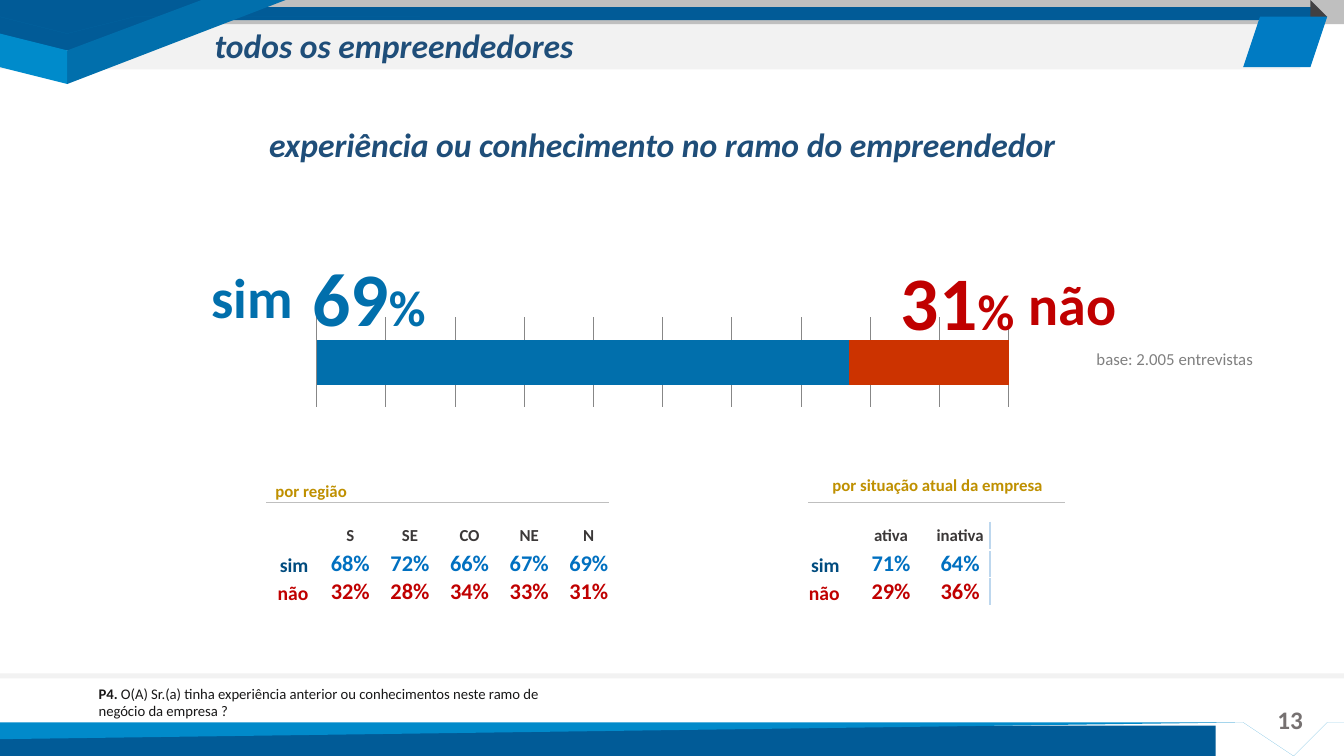
"""Build the slide on entrepreneurs' earlier experience in their line of business."""
from lxml import etree
from pptx import Presentation
from pptx.chart.data import CategoryChartData
from pptx.dml.color import RGBColor
from pptx.enum.chart import XL_CHART_TYPE
from pptx.enum.shapes import MSO_CONNECTOR, MSO_SHAPE
from pptx.enum.text import MSO_ANCHOR, MSO_AUTO_SIZE, PP_ALIGN
from pptx.oxml import parse_xml
from pptx.oxml.ns import nsdecls, qn
from pptx.util import Inches, Pt

LEFT, CENTER, RIGHT = PP_ALIGN.LEFT, PP_ALIGN.CENTER, PP_ALIGN.RIGHT
TOP, MIDDLE, BOTTOM = MSO_ANCHOR.TOP, MSO_ANCHOR.MIDDLE, MSO_ANCHOR.BOTTOM
RECTANGLE, STRAIGHT = MSO_SHAPE.RECTANGLE, MSO_CONNECTOR.STRAIGHT
STACKED_BAR, NO_AUTOFIT = XL_CHART_TYPE.BAR_STACKED_100, MSO_AUTO_SIZE.NONE
FONT = "Calibri"
CELL = Inches(1 / 6)
COLUMNS, ROWS = 80, 45
COLORS = {
    "pale": "F2F2F2", "silver": "BFBFBF", "navy": "015B97", "blue": "016FAC",
    "sky": "008BCB", "chevron": "018ACA", "fold": "414042", "badge": "007BC3",
    "title": "1F4E79", "red": "C00000", "orange": "CC3300", "gold": "BF9000",
    "grey": "808080", "page": "767171", "ink": "181717", "header": "3B3838",
    "yes label": "004B7E", "yes value": "0070C0", "rule": "BDD7EE", "white": "FFFFFF",
}
RGB = {name: RGBColor.from_string(value) for name, value in COLORS.items()}


def grid(*cells):
    """Turn grid cells into slide lengths."""
    return [round(cell * CELL) for cell in cells]


def style(paragraph, size, color, bold=True, italic=False, align=LEFT):
    """Format a whole paragraph."""
    paragraph.alignment = align
    font = paragraph.font
    font.name, font.size, font.bold, font.italic = FONT, Pt(size), bold, italic
    font.color.rgb = RGB[color]


presentation = Presentation()
presentation.slide_width, presentation.slide_height = grid(COLUMNS, ROWS)
slide = presentation.slides.add_slide(presentation.slide_layouts[5])
shapes = slide.shapes

bands = [
    (0, 0.9, 77.4, 3.24, "pale"),
    (0, 0, COLUMNS, 1.44, "silver"),
    (6.78, 0.42, 71.4, 0.78, "navy"),
    (0, 40.08, COLUMNS, 0.3, "pale"),
    (0, 43.2, 72.36, 1.8, "navy"),
]
outlines = [
    ("navy", [(0.06, 0), (15.27, 0), (7.74, 3.3), (0, 3.3)]),
    ("blue", [(16.75, 0), (11.92, 0), (3.9, 2.94), (3.9, 4.98)]),
    ("sky", [(3.9, 3), (0.06, 1.62), (0.06, 3.6), (3.9, 4.98)]),
    ("chevron", [(0, 43.32), (74.04, 43.2), (76.62, 44.58), (79.26, 43.2), (80, 43.2),
                 (80, 43.44), (79.26, 43.44), (76.62, 44.88), (73.98, 43.44), (0, 43.5)]),
    ("blue", [(0.06, 0.9), (0.36, 0.9), (4.2, 2.28), (8.04, 0.9), (24.6, 0.9),
              (24.6, 1.08), (8.04, 1.08), (4.2, 2.46), (0.36, 1.08), (0.06, 1.08)]),
    ("fold", [(78.18, 1.2), (78.18, 0.42), (79.08, 1.2)]),
    ("badge", [(75.18, 1.2), (79.08, 1.2), (78.42, 4.08), (78.3, 4.38), (78.12, 4.5),
               (74.46, 4.5), (74.28, 4.4), (74.26, 4.2), (74.88, 1.44), (75, 1.25)]),
]
decorations = []
for *box, color in bands:
    decorations.append((shapes.add_shape(RECTANGLE, *grid(*box)), color))
for color, points in outlines:
    builder = shapes.build_freeform(*points[0], scale=CELL)
    builder.add_line_segments(points[1:], close=True)
    decorations.append((builder.convert_to_shape(), color))
for shape, color in decorations:
    shape.shadow.inherit = False
    shape.fill.solid()
    shape.fill.fore_color.rgb = RGB[color]
    shape.line.fill.background()

title = shapes.title
shapes.element.append(title.element)
title.left, title.top, title.width, title.height = grid(12.18, 1.44, 62.46, 3.06)
title.text_frame.text = "todos os empreendedores"
title.text_frame.vertical_anchor = TOP
title.text_frame.auto_size = NO_AUTOFIT
title.text_frame.paragraphs[0].line_spacing = 0.9
style(title.text_frame.paragraphs[0], 24, "title", italic=True)

chart_data = CategoryChartData()
chart_data.categories = ["1"]
chart_data.add_series("Series 1", [77])
chart_data.add_series("Series 2", [23])
chart = shapes.add_chart(STACKED_BAR, *grid(18, 18.78, 42.9, 5.58), chart_data).chart
chart.has_title = chart.has_legend = False
chart.font.name, chart.font.size = FONT, Pt(10)
chart.category_axis.visible = chart.value_axis.visible = False
plot = chart.plots[0]
plot.vary_by_categories = False
plot.gap_width, plot.overlap = 100, 100
for series, color in zip(plot.series, ["blue", "orange"]):
    series.format.fill.solid()
    series.format.fill.fore_color.rgb = RGB[color]
plot_area = chart.element.find(".//" + qn("c:plotArea"))
for layout in plot_area.findall(qn("c:layout")):
    plot_area.remove(layout)
plot_area.insert(0, parse_xml(
    f'<c:layout {nsdecls("c")}><c:manualLayout><c:layoutTarget val="inner"/>'
    '<c:xMode val="edge"/><c:yMode val="edge"/><c:x val="0.02"/><c:y val="0.02"/>'
    '<c:w val="0.96"/><c:h val="0.96"/></c:manualLayout></c:layout>'))

texts = [
    ((74.94, 41.64, 3.72, 2.4), "13", 18, "page", True, False, CENTER, False, 1),
    ((14.76, 7.38, 49.32, 3.24), "experiência ou conhecimento no ramo do empreendedor",
     24, "title", True, True, CENTER, True, 0.9),
    ((12, 15.36, 6.12, 4.62), "sim", 40, "blue", True, False, LEFT, False, 1),
    ((60.66, 15.72, 6.48, 4.62), "não", 40, "red", True, False, LEFT, False, 1),
    ((63.9, 20.58, 12.06, 1.44), "base: 2.005 entrevistas",
     12, "grey", False, False, CENTER, True, 0.9),
    ((14.16, 28.44, 7.08, 1.68), "por região", 12, "gold", True, False, RIGHT, True, 0.9),
    ((48.96, 28.08, 14.4, 2.04), "por situação atual da empresa",
     12, "gold", True, False, LEFT, True, 0.9),
    ((18, 14.64, 8.04, 6.06), "69", 54, "blue", True, False, LEFT, False, 1),
    ((53.04, 14.88, 8.04, 6.06), "31", 54, "red", True, False, LEFT, False, 1),
    ((5.28, 40.44, 29.88, 4.38), "P4. ", 10.5, "ink", True, False, LEFT, True, 1),
]
question = "O(A) Sr.(a) tinha experiência anterior ou conhecimentos neste ramo de negócio da empresa ?"
endings = {"69": ("%", 36, True), "31": ("%", 36, True), "P4. ": (question, 10.5, False)}
for box, text, size, color, bold, italic, align, wrap, spacing in texts:
    text_frame = shapes.add_textbox(*grid(*box)).text_frame
    text_frame.word_wrap = wrap
    paragraph = text_frame.paragraphs[0]
    paragraph.line_spacing = spacing
    style(paragraph, size, color, bold, italic, align)
    paragraph.add_run().text = text
    if text in endings:
        ending = paragraph.add_run()
        ending.text, ending_size, ending.font.bold = endings[text]
        ending.font.size = Pt(ending_size)

for start, end in [(15.84, 36.24), (48.12, 63.42)]:
    rule = shapes.add_connector(STRAIGHT, *grid(start, 29.88, end, 29.88))
    rule.line.color.rgb = RGB["silver"]
    rule.line.width = Pt(0.5)
    etree.SubElement(rule.element.spPr, qn("a:effectLst"))

tables = [
    (13.08, [6] + [3.55] * 5, False, [
        ["", "S", "SE", "CO", "NE", "N"],
        ["sim", "68%", "72%", "66%", "67%", "69%"],
        ["não", "32%", "28%", "34%", "33%", "31%"]]),
    (43.68, [7.02, 4.68, 3.55], True, [
        ["", "ativa", "inativa"],
        ["sim", "71%", "64%"],
        ["não", "29%", "36%"]]),
]
label_colors = ["header", "yes label", "red"]
value_colors = ["header", "yes value", "red"]
row_height = 1.66
for left, widths, closed, rows in tables:
    box = grid(left, 31.08, sum(widths), row_height * len(rows))
    table = shapes.add_table(len(rows), len(widths), *box).table
    table.first_row = table.horz_banding = False
    for column, width in zip(table.columns, grid(*widths)):
        column.width = width
    for row_index, row in enumerate(rows):
        table.rows[row_index].height = grid(row_height)[0]
        for column_index, text in enumerate(row):
            cell = table.cell(row_index, column_index)
            is_label = column_index == 0
            cell.margin_left = cell.margin_top = cell.margin_bottom = 0
            cell.margin_right = Inches(0.12) if is_label else 0
            cell.vertical_anchor = BOTTOM if row_index else MIDDLE
            cell.fill.background()
            cell.text = text
            size = 12 if row_index == 0 else 14 if is_label else 16
            color = (label_colors if is_label else value_colors)[row_index]
            style(cell.text_frame.paragraphs[0], size, color,
                  align=RIGHT if is_label else CENTER)
            if closed or column_index < len(row) - 1:
                cell._tc.get_or_add_tcPr().insert(0, parse_xml(
                    f'<a:lnR {nsdecls("a")} w="12700"><a:solidFill>'
                    f'<a:srgbClr val="{COLORS["rule"]}"/></a:solidFill></a:lnR>'))

presentation.save("out.pptx")
